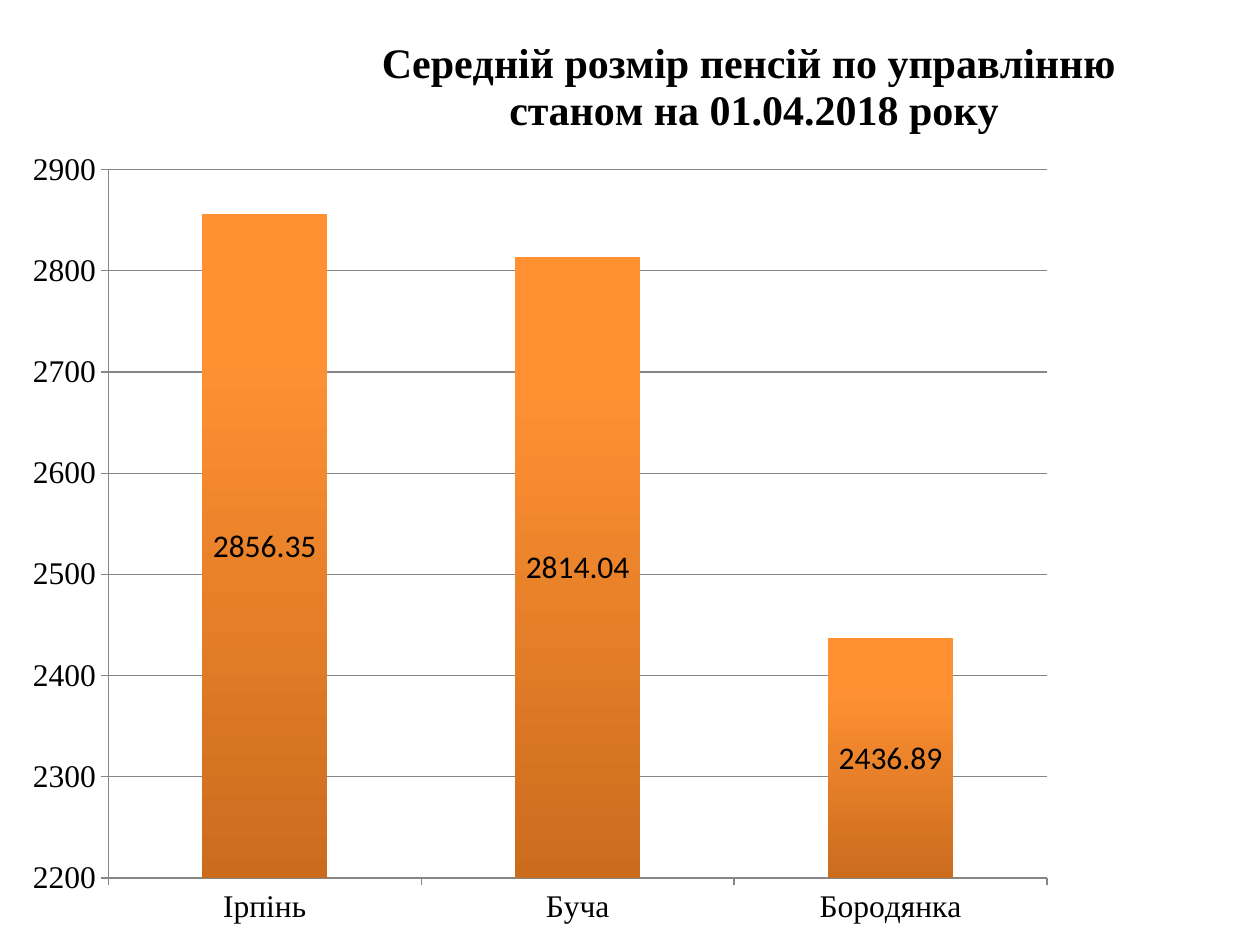
"""Build a slide with a column chart of average pensions by town."""
from lxml import etree
from pptx import Presentation
from pptx.chart.data import CategoryChartData
from pptx.dml.color import RGBColor
from pptx.enum.chart import XL_CHART_TYPE, XL_LABEL_POSITION, XL_TICK_MARK
from pptx.enum.text import PP_ALIGN
from pptx.oxml.ns import qn
from pptx.util import Pt

PX = 914400 / 126
BLACK = RGBColor(0x00, 0x00, 0x00)
GRAY = RGBColor(0x86, 0x86, 0x86)
DARK_ORANGE = RGBColor(0xCB, 0x6C, 0x1D)
ORANGE = RGBColor(0xFF, 0x91, 0x33)
STACKED = XL_CHART_TYPE.COLUMN_STACKED
LABEL_CENTER = XL_LABEL_POSITION.CENTER
TICK_OUTSIDE = XL_TICK_MARK.OUTSIDE
CENTER = PP_ALIGN.CENTER

TITLE_LINES = ["Середній розмір пенсій по управлінню ", "станом на 01.04.2018 року"]
PENSIONS = {"Ірпінь": 2856.35, "Буча": 2814.04, "Бородянка": 2436.89}


def px(length):
    return round(length * PX)


def style_font(font, name, size, bold=False, color=BLACK):
    font.name = name
    font.size = Pt(size)
    font.bold = bold
    font.color.rgb = color


def write_text(paragraph, text, align=CENTER, **style):
    paragraph.alignment = align
    run = paragraph.add_run()
    run.text = text
    style_font(run.font, **style)


def place(parent, index, **values):
    layout = parent.find(qn("c:layout"))
    if layout is None:
        layout = etree.Element(qn("c:layout"))
        parent.insert(index, layout)
    manual = etree.SubElement(layout, qn("c:manualLayout"))
    for tag, value in values.items():
        etree.SubElement(manual, qn(f"c:{tag}")).set("val", str(value))


class SlideBuilder:
    def __init__(self, slide):
        self.slide = slide
        self.heading_font = "Times New Roman"
        self.body_font = "Calibri"
        self.size = 18

    def add_column_chart(self, left, top, width, height, values):
        chart_data = CategoryChartData()
        chart_data.categories = list(values)
        chart_data.add_series("Series 1", list(values.values()))
        frame = self.slide.shapes.add_chart(
            STACKED, px(left), px(top), px(width), px(height), chart_data)
        chart = frame.chart
        chart.has_legend = False
        style_font(chart.font, self.body_font, self.size)
        plot = chart.plots[0]
        plot.gap_width = 150
        plot.overlap = 100
        plot.vary_by_categories = False
        plot.has_data_labels = True
        labels = plot.data_labels
        labels.show_value = True
        labels.position = LABEL_CENTER
        style_font(labels.font, self.body_font, self.size)
        self.fill_columns(plot.series[0])
        plot_area = chart.element.find(".//" + qn("c:plotArea"))
        place(plot_area, 0, layoutTarget="inner", xMode="edge", yMode="edge",
              x=0.086, y=0.2, w=0.745, h=0.731)
        return chart

    def fill_columns(self, series):
        fill = series.format.fill
        fill.gradient()
        fill.gradient_angle = 90
        stops = zip(fill.gradient_stops, [(0, DARK_ORANGE), (0.8, ORANGE)])
        for stop, (position, color) in stops:
            stop.position = position
            stop.color.rgb = color

    def add_title(self, chart, lines, x, y):
        chart.has_title = True
        title = chart.chart_title
        title.include_in_layout = False
        frame = title.text_frame
        for number, line in enumerate(lines):
            paragraph = frame.add_paragraph() if number else frame.paragraphs[0]
            write_text(paragraph, line, name=self.heading_font, size=24, bold=True)
        place(title.format.line and chart.element.find(".//" + qn("c:title")), 1,
              xMode="edge", yMode="edge", x=x, y=y)

    def style_axis(self, axis):
        axis.major_tick_mark = TICK_OUTSIDE
        axis.format.line.color.rgb = GRAY
        axis.format.line.width = Pt(0.75)
        style_font(axis.tick_labels.font, self.heading_font, self.size)

    def scale_values(self, axis, minimum, maximum, step):
        axis.minimum_scale = minimum
        axis.maximum_scale = maximum
        axis.major_unit = step
        axis.tick_labels.number_format = "General"
        axis.tick_labels.number_format_is_linked = False
        axis.has_major_gridlines = True
        axis.major_gridlines.format.line.color.rgb = GRAY
        axis.major_gridlines.format.line.width = Pt(0.75)


def main():
    presentation = Presentation()
    presentation.slide_width = px(1260)
    presentation.slide_height = px(945)
    builder = SlideBuilder(presentation.slides.add_slide(presentation.slide_layouts[6]))
    chart = builder.add_column_chart(0, -24, 1260, 969, PENSIONS)
    builder.add_title(chart, TITLE_LINES, x=0.3, y=0.06)
    for axis in (chart.category_axis, chart.value_axis):
        builder.style_axis(axis)
    builder.scale_values(chart.value_axis, 2200, 2900, 100)
    presentation.save("out.pptx")


if __name__ == "__main__":
    main()
